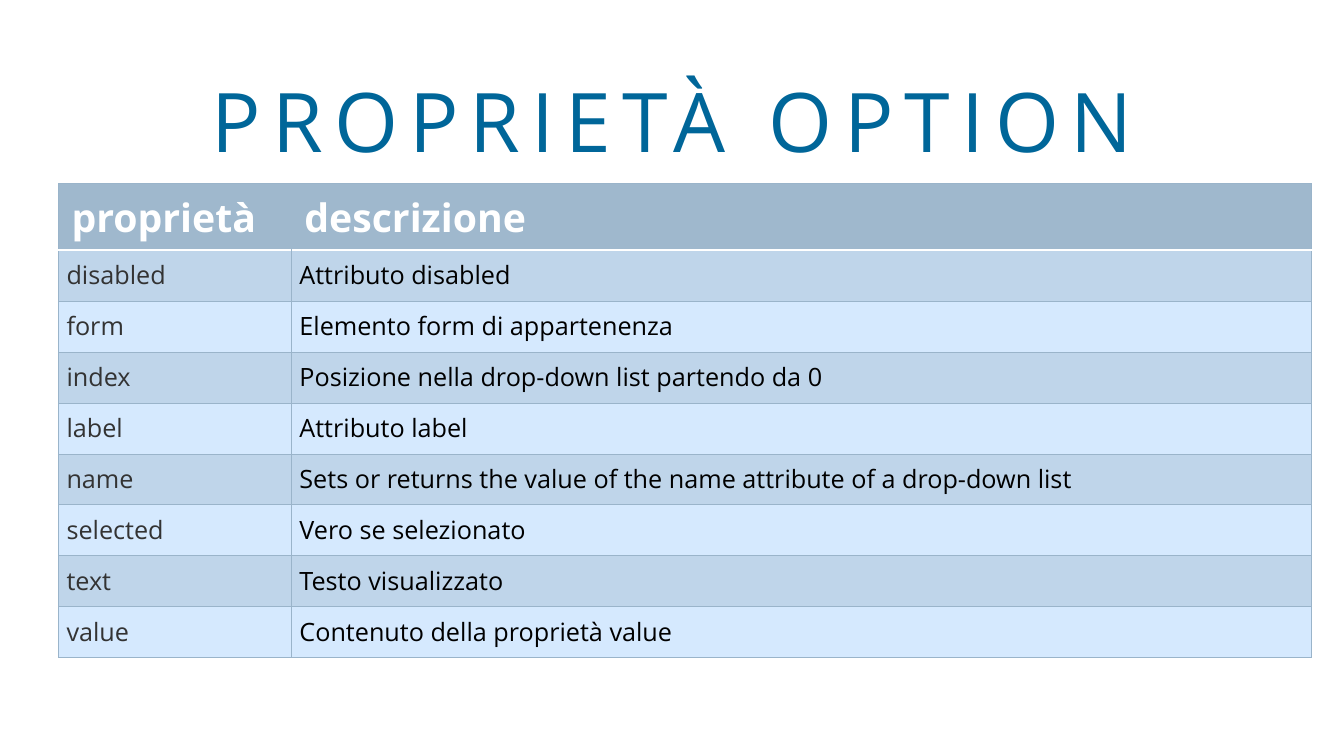
from pptx import Presentation
from pptx.dml.color import RGBColor
from pptx.enum.text import MSO_ANCHOR, PP_ALIGN
from pptx.oxml.ns import qn
from pptx.util import Inches, Pt
from lxml import etree

MIDDLE = MSO_ANCHOR.MIDDLE
TOP = MSO_ANCHOR.TOP
CENTER = PP_ALIGN.CENTER

FONT = "Open Sans"
BLUE = RGBColor(0x00, 0x66, 0x99)
HEAD = RGBColor(0x9F, 0xB8, 0xCD)
DARK = RGBColor(0xBF, 0xD5, 0xEA)
LIGHT = RGBColor(0xD5, 0xE9, 0xFE)
EDGE = RGBColor(0x9A, 0xB4, 0xCA)
WHITE = RGBColor(0xFF, 0xFF, 0xFF)
GREY = RGBColor(0x33, 0x33, 0x33)
BLACK = RGBColor(0x00, 0x00, 0x00)

ROWS = [
    ("proprietà", "descrizione"),
    ("disabled", "Attributo disabled"),
    ("form", "Elemento form di appartenenza"),
    ("index", "Posizione nella drop-down list partendo da 0"),
    ("label", "Attributo label"),
    ("name", "Sets or returns the value of the name attribute of a drop-down list"),
    ("selected", "Vero se selezionato"),
    ("text", "Testo visualizzato"),
    ("value", "Contenuto della proprietà value"),
]


def add_run(para, text, size, color, bold=False):
    run = para.add_run()
    run.text = text
    font = run.font
    font.name, font.size, font.bold = FONT, Pt(size), bold
    font.color.rgb = color
    return run


def add_title(slide, left, top, width, height):
    box = slide.shapes.add_textbox(
        Inches(left), Inches(top), Inches(width), Inches(height))
    frame = box.text_frame
    frame.word_wrap = True
    frame.vertical_anchor = MIDDLE
    para = frame.paragraphs[0]
    para.alignment = CENTER
    run = add_run(para, "PROPRIETÀ OPTION", 58.7, BLUE)
    run.font._element.set("spc", "800")


def add_edge(cell, side, color, width):
    props = cell._tc.get_or_add_tcPr()
    line = etree.SubElement(props, qn("a:ln" + side), w=str(Pt(width)))
    if color is None:
        etree.SubElement(line, qn("a:noFill"))
    else:
        fill = etree.SubElement(line, qn("a:solidFill"))
        etree.SubElement(fill, qn("a:srgbClr"), val=str(color))


def style_cell(cell, text, row, col):
    head = row == 0
    pad_x, pad_y = (0.13, 0.07) if head else (0.08, 0.08)
    cell.margin_left = cell.margin_right = Inches(pad_x)
    cell.margin_top = cell.margin_bottom = Inches(pad_y)
    cell.vertical_anchor = TOP
    edges = {side: (EDGE, 0.75) for side in "LRTB"}
    if head:
        edges["R" if col == 0 else "L"] = (None, 0.75)
        edges["B"] = (WHITE, 2)
    elif row == 1:
        edges["T"] = (WHITE, 2)
    for side, (color, width) in edges.items():
        add_edge(cell, side, color, width)
    cell.fill.solid()
    cell.fill.fore_color.rgb = HEAD if head else DARK if row % 2 else LIGHT
    ink = WHITE if head else BLACK if col else GREY
    add_run(cell.text_frame.paragraphs[0], text, 28 if head else 18, ink, head)


def add_grid(slide, left, top, width, height):
    table = slide.shapes.add_table(
        len(ROWS), 2, Inches(left), Inches(top),
        Inches(width), Inches(height)).table
    table.horz_banding = False
    first, top_row = 2.31, 0.66
    table.columns[0].width = Inches(first)
    table.columns[1].width = Inches(width - first)
    step = (height - top_row) / (len(ROWS) - 1)
    for row, texts in enumerate(ROWS):
        table.rows[row].height = Inches(step if row else top_row)
        for col, text in enumerate(texts):
            style_cell(table.cell(row, col), text, row, col)


def main():
    deck = Presentation()
    deck.slide_width, deck.slide_height = Inches(13.33), Inches(7.5)
    slide = deck.slides.add_slide(deck.slide_layouts[6])
    add_title(slide, 0.67, 0.83, 12, 0.71)
    add_grid(slide, 0.58, 1.82, 12.43, 4.71)
    deck.save("out.pptx")


if __name__ == "__main__":
    main()
